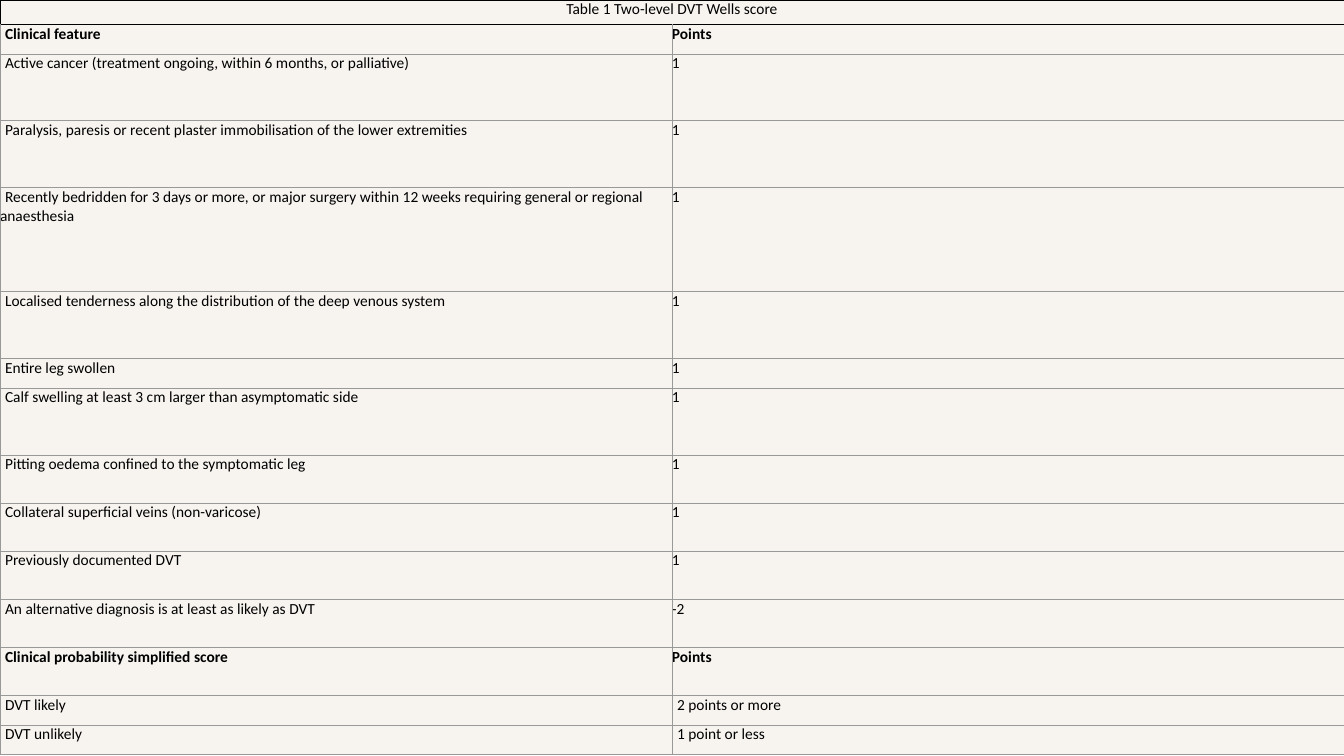
"""Build a slide with the two-level DVT Wells score table."""
from dataclasses import dataclass

from lxml.etree import SubElement
from pptx import Presentation
from pptx.dml.color import RGBColor
from pptx.enum.text import PP_ALIGN as Align
from pptx.oxml.ns import qn
from pptx.table import _Cell as Cell
from pptx.util import Pt

SLIDE_WIDTH, SLIDE_HEIGHT = 960, 540
TITLE, SHORT, MEDIUM, TALL, EXTRA_TALL = 17.5, 21.1, 34.4, 47.7, 74.5
BLACK, GREY, CREAM = "000000", "999999", "F7F4F0"
INDENT = 3.6
NO_MARGINS = {"margin_left": 0, "margin_right": 0, "margin_top": 0, "margin_bottom": 0}
CELL_FONT = {"name": "Calibri", "size": Pt(11)}


@dataclass
class ScoreRow:
    feature: str
    points: str
    height: float
    bold: bool = False
    points_indent: float = 0


@dataclass
class Border:
    side: str
    color: str
    width: float


SCORE_ROWS = [
    ScoreRow("Clinical feature", "Points", SHORT, bold=True),
    ScoreRow("Active cancer (treatment ongoing, within 6 months, or palliative)", "1", TALL),
    ScoreRow("Paralysis, paresis or recent plaster immobilisation of the lower extremities", "1", TALL),
    ScoreRow("Recently bedridden for 3 days or more, or major surgery within 12 weeks "
             "requiring general or regional anaesthesia", "1", EXTRA_TALL),
    ScoreRow("Localised tenderness along the distribution of the deep venous system", "1", TALL),
    ScoreRow("Entire leg swollen", "1", SHORT),
    ScoreRow("Calf swelling at least 3 cm larger than asymptomatic side", "1", TALL),
    ScoreRow("Pitting oedema confined to the symptomatic leg", "1", MEDIUM),
    ScoreRow("Collateral superficial veins (non-varicose)", "1", MEDIUM),
    ScoreRow("Previously documented DVT", "1", MEDIUM),
    ScoreRow("An alternative diagnosis is at least as likely as DVT", "-2", MEDIUM),
    ScoreRow("Clinical probability simplified score", "Points", MEDIUM, bold=True),
    ScoreRow("DVT likely", "2 points or more", SHORT, points_indent=INDENT),
    ScoreRow("DVT unlikely", "1 point or less", SHORT, points_indent=INDENT),
]


def rgb(color: str) -> RGBColor:
    return RGBColor.from_string(color)


def draw_cell(cell: Cell, borders: list[Border]) -> None:
    properties = cell._tc.get_or_add_tcPr()
    for border in borders:
        line = SubElement(properties, qn(f"a:ln{border.side}"), w=str(Pt(border.width)))
        SubElement(SubElement(line, qn("a:solidFill")), qn("a:srgbClr"), val=border.color)
    cell.fill.solid()
    cell.fill.fore_color.rgb = rgb(CREAM)
    for name, value in NO_MARGINS.items():
        setattr(cell, name, value)


def write_cell(cell: Cell, text: str, indent: float = 0, bold: bool = False,
               align: Align = Align.LEFT) -> None:
    paragraph = cell.text_frame.paragraphs[0]
    paragraph.alignment = align
    paragraph._p.get_or_add_pPr().set("indent", str(Pt(indent)))
    run = paragraph.add_run()
    run.text = text
    for name, value in (CELL_FONT | {"bold": bold}).items():
        setattr(run.font, name, value)
    run.font.color.rgb = rgb(BLACK)


def main() -> None:
    deck = Presentation()
    deck.slide_width, deck.slide_height = Pt(SLIDE_WIDTH), Pt(SLIDE_HEIGHT)
    slide = deck.slides.add_slide(deck.slide_layouts[6])
    heights = [TITLE] + [row.height for row in SCORE_ROWS]
    wells_score = slide.shapes.add_table(len(heights), 2, 0, 0, Pt(SLIDE_WIDTH), Pt(sum(heights))).table
    wells_score.first_row = wells_score.horz_banding = False
    for table_row, height in zip(wells_score.rows, heights):
        table_row.height = Pt(height)

    title_borders = [Border(side, BLACK, 1 if side == "B" else 0.5) for side in "LRTB"]
    for column in range(2):
        draw_cell(wells_score.cell(0, column), title_borders)
    wells_score.cell(0, 0).merge(wells_score.cell(0, 1))
    write_cell(wells_score.cell(0, 0), "Table 1 Two-level DVT Wells score", align=Align.CENTER)

    for number, row in enumerate(SCORE_ROWS, start=1):
        top = Border("T", BLACK, 1) if number == 1 else Border("T", GREY, 0.5)
        bottom = Border("B", GREY, 0.25 if number == len(SCORE_ROWS) else 0.5)
        feature, points = wells_score.cell(number, 0), wells_score.cell(number, 1)
        draw_cell(feature, [Border("L", GREY, 0.25), Border("R", GREY, 0.5), top, bottom])
        draw_cell(points, [Border("L", GREY, 0.5), Border("R", GREY, 0.25), top, bottom])
        write_cell(feature, row.feature, INDENT, row.bold)
        write_cell(points, row.points, row.points_indent, row.bold)
    deck.save("out.pptx")


if __name__ == "__main__":
    main()
